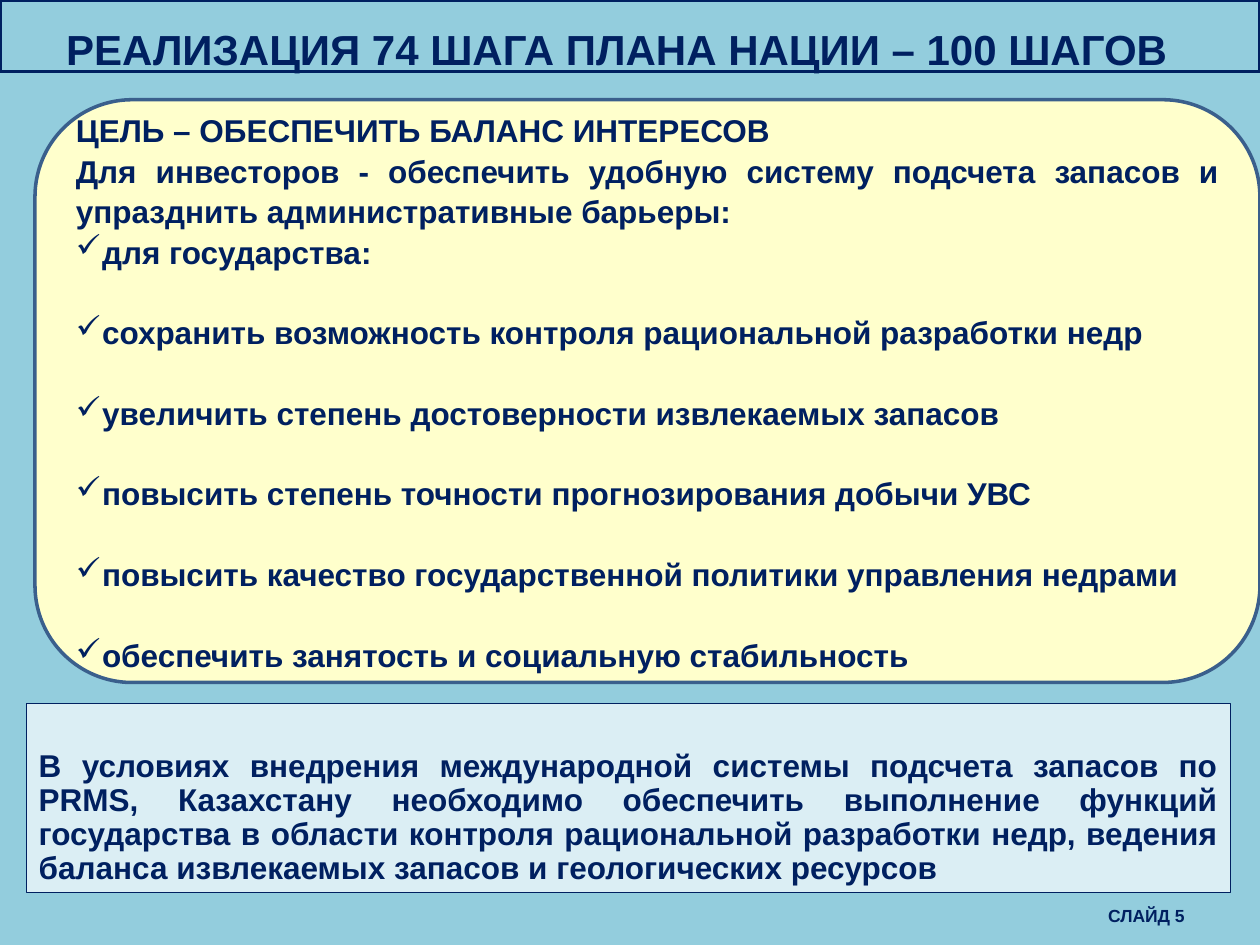
import pptx
import pptx.util
import pptx.dml.color
import pptx.enum.shapes
import pptx.enum.text
import pptx.oxml.ns
import lxml.etree

Pt = pptx.util.Pt
RGBColor = pptx.dml.color.RGBColor
Shape = pptx.enum.shapes.MSO_SHAPE
Align = pptx.enum.text.PP_ALIGN
Anchor = pptx.enum.text.MSO_ANCHOR

NAVY = RGBColor(0x00, 0x20, 0x60)
SKY = RGBColor(0x93, 0xCD, 0xDD)
PALE_BLUE = RGBColor(0xDB, 0xEE, 0xF4)
CREAM = RGBColor(0xFF, 0xFF, 0xCC)
STEEL = RGBColor(0x3A, 0x5F, 0x8C)

TITLE = "РЕАЛИЗАЦИЯ 74 ШАГА ПЛАНА НАЦИИ – 100 ШАГОВ"
INTRO = [
    "ЦЕЛЬ – ОБЕСПЕЧИТЬ БАЛАНС ИНТЕРЕСОВ",
    "Для инвесторов - обеспечить удобную систему подсчета запасов и упразднить административные барьеры:",
]
GOALS = [
    "для государства:",
    "сохранить возможность контроля рациональной разработки недр",
    "увеличить степень достоверности извлекаемых запасов",
    "повысить степень точности прогнозирования добычи УВС",
    "повысить качество государственной политики управления недрами",
    "обеспечить занятость и социальную стабильность",
]
CONCLUSION = (
    "В условиях внедрения международной системы подсчета запасов по PRMS, "
    "Казахстану необходимо обеспечить выполнение функций государства в области "
    "контроля рациональной разработки недр, ведения баланса извлекаемых запасов "
    "и геологических ресурсов"
)


class SlideBuilder:
    font_name = "Arial"
    text_color = NAVY
    bullet_indent = 15
    goal_gap = 23

    def __init__(self, deck):
        self.page = deck.slides.add_slide(deck.slide_layouts[5])
        self.page.background.fill.solid()
        self.page.background.fill.fore_color.rgb = SKY

    def panel(self, kind, left, top, width, height, line, weight, fill=None):
        box = self.page.shapes.add_shape(kind, Pt(left), Pt(top), Pt(width), Pt(height))
        box.shadow.inherit = False
        if fill is None:
            box.fill.background()
        else:
            box.fill.solid()
            box.fill.fore_color.rgb = fill
        box.line.color.rgb = line
        box.line.width = Pt(weight)
        return box

    def title(self, text, left, top, width, height):
        box = self.page.shapes.title
        box.left, box.top, box.width, box.height = Pt(left), Pt(top), Pt(width), Pt(height)
        self.set_text(box, [text], 24, Align.CENTER, 0.9, Anchor.TOP)
        tree = self.page.shapes._spTree
        tree.remove(box._element)
        tree.append(box._element)

    def label(self, text, left, top, width, height):
        box = self.page.shapes.add_textbox(Pt(left), Pt(top), Pt(width), Pt(height))
        self.set_text(box, [text], 10, Align.RIGHT, 1.0, Anchor.MIDDLE)

    def set_text(self, box, texts, size, alignment, spacing, anchor):
        frame = box.text_frame
        frame.word_wrap = True
        frame.auto_size = pptx.enum.text.MSO_AUTO_SIZE.NONE
        frame.vertical_anchor = anchor
        frame.text = "\n".join(texts)
        for para in frame.paragraphs:
            para.alignment = alignment
            para.line_spacing = spacing
            para.space_before = para.space_after = Pt(0)
            para.font.name = self.font_name
            para.font.size = Pt(size)
            para.font.bold = True
            para.font.color.rgb = self.text_color
        return frame.paragraphs

    def check(self, para):
        properties = para._p.get_or_add_pPr()
        properties.set("marL", str(Pt(self.bullet_indent)))
        properties.set("indent", str(-Pt(self.bullet_indent)))
        bullet = lxml.etree.Element(pptx.oxml.ns.qn("a:buChar"), char="✓")
        properties.find(pptx.oxml.ns.qn("a:defRPr")).addprevious(bullet)

    def goals(self, box, intro, goals):
        paragraphs = self.set_text(box, intro + goals, 18, Align.JUSTIFY, 1.07, Anchor.MIDDLE)
        for index, para in enumerate(paragraphs[len(intro):]):
            if index > 0:
                para.space_before = Pt(self.goal_gap)
            self.check(para)


def main():
    deck = pptx.Presentation()
    deck.slide_width, deck.slide_height = Pt(720), Pt(540)
    slide = SlideBuilder(deck)

    conclusion = slide.panel(Shape.RECTANGLE, 15, 402, 688, 108, NAVY, 0.75, PALE_BLUE)
    slide.set_text(conclusion, [CONCLUSION], 18, Align.JUSTIFY, 0.9, Anchor.BOTTOM)
    slide.label("СЛАЙД 5", 516, 516, 168, 14)
    slide.panel(Shape.RECTANGLE, 0, 0, 720, 41, NAVY, 2)
    slide.title(TITLE, 0, 13, 705, 33)
    goals = slide.panel(Shape.ROUNDED_RECTANGLE, 20, 57, 700, 333, STEEL, 2, CREAM)
    slide.goals(goals, INTRO, GOALS)

    deck.save("out.pptx")


if __name__ == "__main__":
    main()
